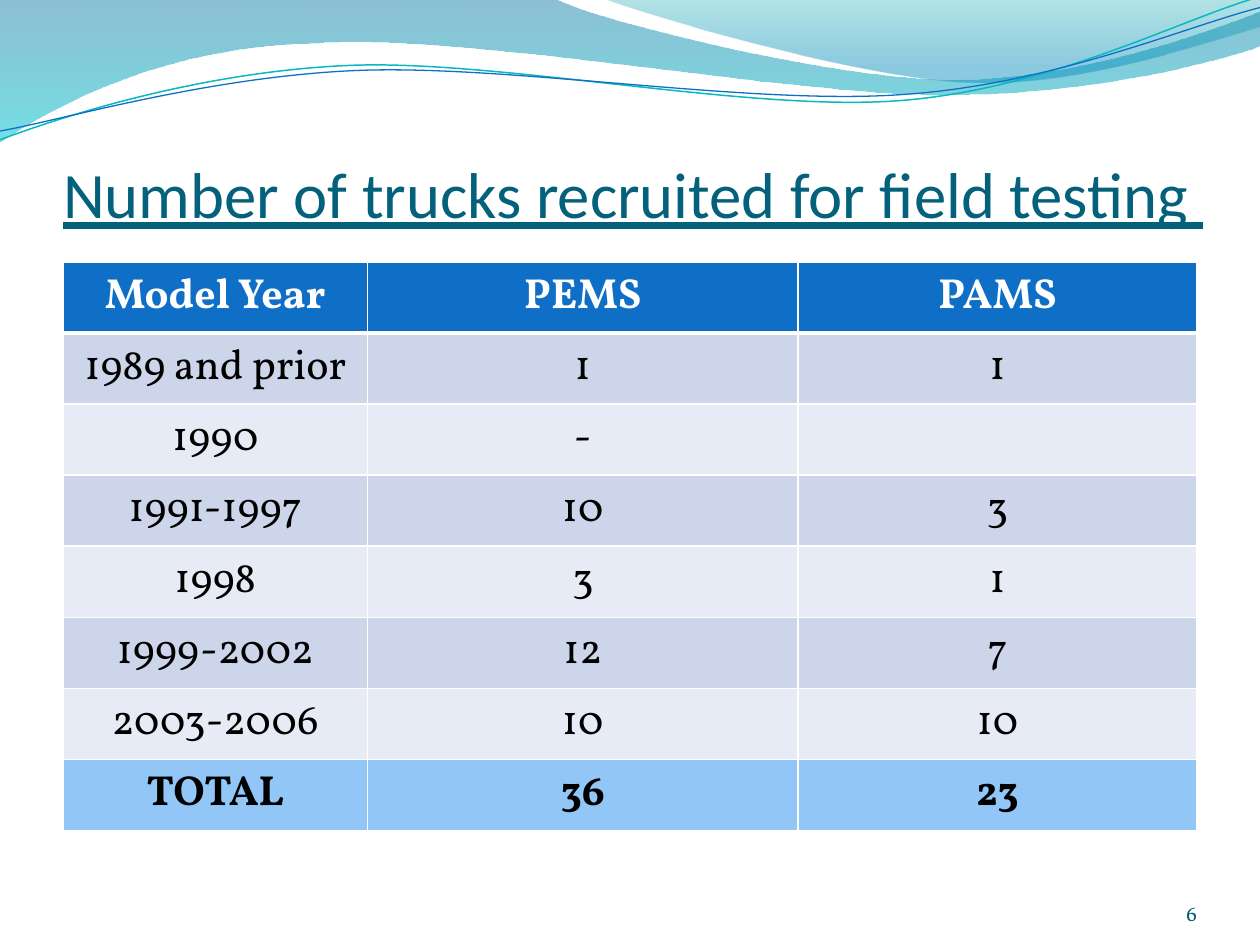
from lxml.etree import SubElement
from pptx import Presentation
from pptx.dml.color import RGBColor
from pptx.enum.text import MSO_ANCHOR, MSO_AUTO_SIZE, PP_ALIGN
from pptx.oxml.ns import qn
from pptx.util import Inches, Pt

BANDS = [
    ((0, 0), [
        [(4.4, -0.01)],
        [(4.76, 0.17), (6.64, 0.63), (7.58, 0.63)],
        [(8.53, 0.63), (9.58, 0.26), (10, 0.09)],
        [(10.01, 0.36)],
        [(9.83, 0.44), (8.7, 0.76), (7.46, 0.75)],
        [(6.22, 0.75), (3.82, 0.28), (2.57, 0.34)],
        [(1.29, 0.36), (0.46, 0.83), (-0.01, 1.13)],
    ], [(0, "0074A1", 45), (1, "00C6CF", 55)]),
    ((4.79, -0.01), [
        [(5.09, 0.11), (6.82, 0.62), (7.69, 0.65)],
        [(8.56, 0.69), (9.61, 0.32), (10, 0.21)],
        [(10, 0)],
    ], [(0, "00A1A9", 30), (0.8, "008BBF", 45)]),
]
STRANDS = [
    ((0, 1.11), [
        [(0.48, 0.93), (1.58, 0.57), (2.77, 0.52)],
        [(3.95, 0.47), (5.93, 0.89), (7.13, 0.8)],
        [(8.33, 0.71), (9.38, 0.15), (9.98, -0.02)],
    ], "0AB8BF", 0.85),
    ((0, 1.04), [
        [(0.47, 0.96), (1.64, 0.61), (2.83, 0.56)],
        [(4.03, 0.51), (5.97, 0.84), (7.17, 0.75)],
        [(8.36, 0.67), (9.41, 0.21), (10, 0.06)],
    ], "0F6FC6", 0.75),
]
TRUCKS = [
    ("Model Year", "PEMS", "PAMS"),
    ("1989 and prior", "1", "1"),
    ("1990", "-", ""),
    ("1991-1997", "10", "3"),
    ("1998", "3", "1"),
    ("1999-2002", "12", "7"),
    ("2003-2006", "10", "10"),
    ("TOTAL", "36", "23"),
]
COLUMN_SHARES = (2.42, 3.42, 3.17)


def color(hex_string):
    return RGBColor.from_string(hex_string)


def style_text(paragraph, font_name, size, hex_string, align, bold=False):
    paragraph.alignment = align
    for span in paragraph.runs:
        span.font.name = font_name
        span.font.size = Pt(size)
        span.font.bold = bold
        span.font.color.rgb = color(hex_string)


def set_frame(frame, top_inset=0):
    frame.word_wrap = True
    frame.auto_size = MSO_AUTO_SIZE.NONE
    frame.vertical_anchor = MSO_ANCHOR.BOTTOM
    frame.margin_left = frame.margin_right = frame.margin_bottom = 0
    frame.margin_top = Inches(top_inset)


def add_outline(shapes, box, start, segments, close):
    def place(point):
        return tuple(Inches(origin + offset) for origin, offset in zip(box, point))

    builder = shapes.build_freeform(*place(start))
    builder.add_line_segments([place(segment[-1]) for segment in segments], close=close)
    shape = builder.convert_to_shape()
    shape.shadow.inherit = False
    for step, segment in zip(list(shape.element.iter(qn("a:lnTo"))), segments):
        if len(segment) == 1:
            continue
        outline = step.getparent()
        curve = SubElement(outline, qn("a:cubicBezTo"))
        for x, y in map(place, segment):
            SubElement(curve, qn("a:pt"), x=str(x - shape.left), y=str(y - shape.top))
        outline.replace(step, curve)
    return shape


def add_waves(page, box):
    for start, segments, stops in BANDS:
        band = add_outline(page.shapes, box, start, segments, True)
        band.line.fill.background()
        band.fill.gradient()
        band.fill.gradient_angle = 270
        for stop, (position, hex_string, _) in zip(band.fill.gradient_stops, stops):
            stop.position = position
            stop.color.rgb = color(hex_string)
        for element, (_, _, opacity) in zip(band.element.iter(qn("a:srgbClr")), stops):
            SubElement(element, qn("a:alpha"), val=str(opacity * 1000))
    strands = page.shapes.add_group_shape()
    for start, segments, hex_string, width in STRANDS:
        strand = add_outline(strands.shapes, box, start, segments, False)
        strand.fill.background()
        strand.line.color.rgb = color(hex_string)
        strand.line.width = Pt(width)


def add_title(page, box):
    title = page.shapes.title
    title.left, title.top, title.width, title.height = map(Inches, box)
    frame = title.text_frame
    frame.text = "Number of trucks recruited for field testing "
    set_frame(frame, 0.05)
    style_text(frame.paragraphs[0], "Calibri", 37, "04617B", PP_ALIGN.LEFT)
    frame.paragraphs[0].runs[0].font.underline = True
    page.shapes.element.append(title.element)


def add_page_number(page, box):
    frame = page.shapes.add_textbox(*map(Inches, box)).text_frame
    frame.text = "6"
    set_frame(frame)
    style_text(frame.paragraphs[0], "Vollkorn", 12, "045D75", PP_ALIGN.RIGHT)


def set_borders(cell, bottom_width):
    properties = cell._tc.get_or_add_tcPr()
    widths = {"a:lnL": 1, "a:lnR": 1, "a:lnT": 1, "a:lnB": bottom_width}
    for index, (tag, width) in enumerate(widths.items()):
        line = SubElement(properties, qn(tag), w=str(Pt(width)))
        fill = SubElement(line, qn("a:solidFill"))
        SubElement(fill, qn("a:srgbClr"), val="FFFFFF")
        properties.insert(index, line)


def row_style(row, last):
    if row == 0:
        return "0F6FC6", "FFFFFF", True
    if row == last:
        return "91C6F7", "000000", True
    return ("CCD5EA" if row % 2 else "E7EBF5"), "000000", False


def add_truck_table(page, box):
    last = len(TRUCKS) - 1
    table = page.shapes.add_table(len(TRUCKS), len(COLUMN_SHARES), *map(Inches, box)).table
    for column, share in zip(table.columns, COLUMN_SHARES):
        column.width = Inches(box[2] * share / sum(COLUMN_SHARES))
    for row, values in enumerate(TRUCKS):
        fill, ink, bold = row_style(row, last)
        for column, value in enumerate(values):
            cell = table.cell(row, column)
            cell.text = value
            cell.fill.solid()
            cell.fill.fore_color.rgb = color(fill)
            set_borders(cell, 3 if row == 0 else 1)
            style_text(cell.text_frame.paragraphs[0], "Vollkorn", 24, ink, PP_ALIGN.CENTER, bold)


def main():
    deck = Presentation()
    deck.slide_width, deck.slide_height = Inches(10), Inches(7.5)
    page = deck.slides.add_slide(deck.slide_layouts[5])
    add_waves(page, (0, 0))
    add_title(page, (0.5, 1.17, 9.5, 0.67))
    add_page_number(page, (8.67, 6.95, 0.83, 0.4))
    add_truck_table(page, (0.5, 2.08, 9, 4.5))
    deck.save("out.pptx")


if __name__ == "__main__":
    main()
